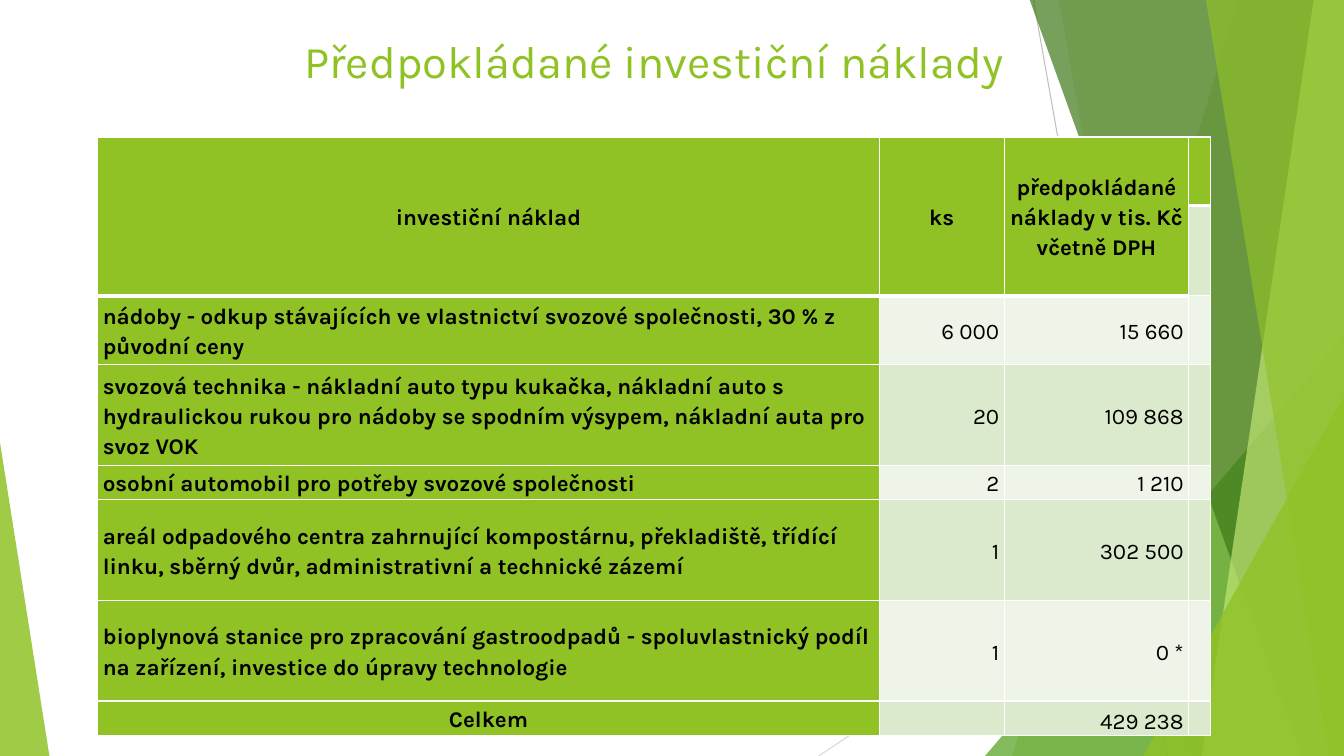
from lxml import etree
from pptx import Presentation
from pptx.dml.color import RGBColor
from pptx.enum.shapes import MSO_CONNECTOR, MSO_SHAPE
from pptx.enum.text import MSO_ANCHOR, MSO_AUTO_SIZE, PP_ALIGN
from pptx.oxml.ns import qn
from pptx.util import Inches, Pt

LINE = MSO_CONNECTOR.STRAIGHT
WEDGE = MSO_SHAPE.ISOSCELES_TRIANGLE
MIDDLE, BOTTOM = MSO_ANCHOR.MIDDLE, MSO_ANCHOR.BOTTOM
LEFT, CENTER, RIGHT = PP_ALIGN.LEFT, PP_ALIGN.CENTER, PP_ALIGN.RIGHT
FIXED = MSO_AUTO_SIZE.NONE

WIDE, HIGH = 13.33, 7.5
FONT = "Karla"
GREEN, WHITE, BLACK = "90C226", "FFFFFF", "000000"
BANDS = ["EEF4E8", "DBE9CD"]

RAYS = [((10.25, 0), (11.58, 7.5), "BFBFBF"), ((13.33, 4.03), (8.12, 7.5), "D9D9D9")]
SHARDS = [
    ("slab", 12.28, 10.04, GREEN, 30),
    ("slab", 10.5, 11.83, GREEN, 20),
    ("wedge", (9.77, 3.33, 3.56, 4.17), 1, "54A021", 72),
    ("slab", 10.21, 12.91, "3F7819", 70),
    ("slab", 13.03, 11.92, "C0E474", 70),
    ("slab", 11.96, 13.18, GREEN, 65),
    ("wedge", (11.34, 3.93, 1.99, 3.57), 1, GREEN, 80),
    ("wedge", (0, 4.39, 0.49, 3.11), 0, GREEN, 85),
]

HEADS = ["investiční náklad", "ks", "předpokládané náklady v tis. Kč včetně DPH"]
COSTS = [
    ("nádoby - odkup stávajících ve vlastnictví svozové společnosti, 30 % z původní ceny",
     "6 000", "15 660"),
    ("svozová technika - nákladní auto typu kukačka, nákladní auto s hydraulickou rukou "
     "pro nádoby se spodním výsypem, nákladní auta pro svoz VOK", "20", "109 868"),
    ("osobní automobil pro potřeby svozové společnosti", "2", "1 210"),
    ("areál odpadového centra zahrnující kompostárnu, překladiště, třídící linku, "
     "sběrný dvůr, administrativní a technické zázemí", "1", "302 500"),
    ("bioplynová stanice pro zpracování gastroodpadů - spoluvlastnický podíl na zařízení, "
     "investice do úpravy technologie", "1", "0 *"),
    ("Celkem", "", "429 238"),
]
COLS = [7.75, 1.24, 1.83, 0.22]
ROWS = [0.68, 0.68, 0.68, 1, 0.34, 1, 1, 0.34]


def color(code):
    return RGBColor.from_string(code)


def write(frame, text, size=16, ink=BLACK, bold=False, align=LEFT, lead=None, after=0):
    para = frame.paragraphs[0]
    para.alignment = align
    para.line_spacing = lead
    para.space_after = Pt(after)
    run = para.add_run()
    run.text = text
    font = run.font
    font.name, font.size, font.bold = FONT, Pt(size), bold
    font.color.rgb = color(ink)


def paint(shape, code, alpha):
    shape.shadow.inherit = False
    shape.fill.solid()
    shape.fill.fore_color.rgb = color(code)
    shape.line.fill.background()
    tone = shape.fill._xPr.find(qn("a:solidFill"))[0]
    etree.SubElement(tone, qn("a:alpha"), val=str(alpha * 1000))


def add_ray(slide, start, end, code):
    ray = slide.shapes.add_connector(LINE, *map(Inches, start + end))
    ray.line.color.rgb = color(code)
    ray.line.width = Pt(0.75)
    etree.SubElement(ray._element.spPr, qn("a:effectLst"))


def add_slab(slide, top, foot):
    build = slide.shapes.build_freeform(Inches(top), Inches(-0.01))
    edge = [(WIDE, -0.01), (WIDE, HIGH), (foot, HIGH)]
    build.add_line_segments([(Inches(x), Inches(y)) for x, y in edge], close=True)
    return build.convert_to_shape()


def add_wedge(slide, box, apex):
    shape = slide.shapes.add_shape(WEDGE, *map(Inches, box))
    shape.adjustments[0] = apex
    return shape


def add_decor(slide):
    for ray in RAYS:
        add_ray(slide, *ray)
    for kind, first, second, code, alpha in SHARDS:
        draw = add_slab if kind == "slab" else add_wedge
        paint(draw(slide, first, second), code, alpha)


def add_title(slide, box, text):
    title = slide.shapes.title
    title.left, title.top, title.width, title.height = map(Inches, box)
    frame = title.text_frame
    frame.word_wrap, frame.auto_size = True, FIXED
    frame.vertical_anchor = MIDDLE
    write(frame, text, size=32.4, ink=GREEN, align=CENTER)
    slide.shapes._spTree.append(title._element)


def style(cell, fill, thick=False):
    cell.margin_left = cell.margin_right = Inches(0.05)
    cell.margin_top = cell.margin_bottom = 0
    cell.vertical_anchor = MIDDLE
    props = cell._tc.get_or_add_tcPr()
    for side in "LRTB":
        width = Pt(3 if thick and side == "B" else 1)
        edge = etree.SubElement(props, qn("a:ln" + side), w=str(width))
        solid = etree.SubElement(edge, qn("a:solidFill"))
        etree.SubElement(solid, qn("a:srgbClr"), val=WHITE)
    cell.fill.solid()
    cell.fill.fore_color.rgb = color(fill)


def add_costs(slide, left, top):
    area = (left, top, sum(COLS), sum(ROWS))
    table = slide.shapes.add_table(len(ROWS), len(COLS), *map(Inches, area)).table
    for col, width in zip(table.columns, COLS):
        col.width = Inches(width)
    for row, height in zip(table.rows, ROWS):
        row.height = Inches(height)
    last, side = len(ROWS) - 1, len(COLS) - 1
    lines = [HEADS, [""] * side, *COSTS]
    for r, line in enumerate(lines):
        for c, text in enumerate([*line, ""]):
            cell = table.cell(r, c)
            head = r == 0 or (r == 1 and c < side)
            label = head or c == 0
            style(cell, GREEN if label else BANDS[r % 2], head)
            align = LEFT if c == 0 else RIGHT
            if head or (r == last and c == 0):
                align = CENTER
            if r == last and c == 2:
                cell.vertical_anchor = BOTTOM
            if r != 1 or c == side:
                write(cell.text_frame, text, bold=label, align=align, lead=1.15,
                      after=10 if text else 0)
    for c in range(side):
        table.cell(0, c).merge(table.cell(1, c))


def main():
    deck = Presentation()
    deck.slide_width, deck.slide_height = Inches(WIDE), Inches(HIGH)
    slide = deck.slides.add_slide(deck.slide_layouts[5])
    add_decor(slide)
    add_title(slide, (1.79, 0.25, 9.4, 0.7), "Předpokládané investiční náklady")
    add_costs(slide, 0.97, 1.36)
    deck.save("out.pptx")


if __name__ == "__main__":
    main()
